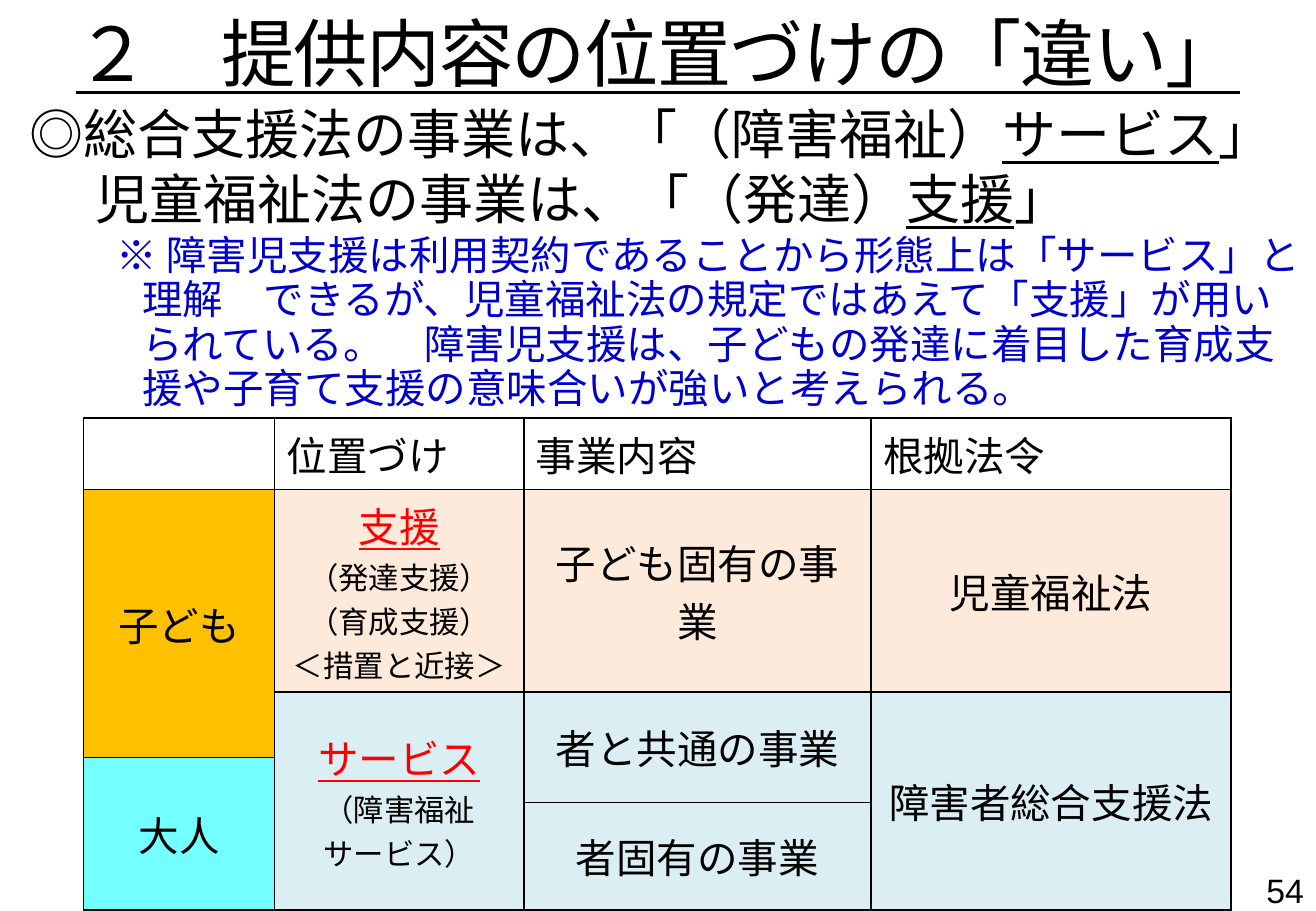
from dataclasses import dataclass
from lxml.etree import SubElement
from pptx import Presentation
from pptx.dml.color import RGBColor as Rgb
from pptx.enum.text import MSO_ANCHOR as Anchor, MSO_AUTO_SIZE as Fit, PP_ALIGN as Align
from pptx.oxml.ns import qn
from pptx.util import Cm, Pt


@dataclass(frozen=True)
class Theme:
    """Hold the colours, fonts and type sizes."""
    ink: str = "000000"
    note: str = "0000CC"
    key: str = "FF0000"
    child: str = "FFC000"
    adult: str = "73FEFF"
    peach: str = "FDEADA"
    sky: str = "DBEEF4"
    sans: str = "Arial"
    gothic: str = "Noto Sans CJK JP"
    title: int = 44
    lead: int = 32
    text: int = 24
    page: int = 20
    small: int = 18


LOOK = Theme()
WIDTHS = (3.99, 5.21, 7.26, 7.52)
HEIGHTS = (1.5, 4.23, 1.37, 0.94, 2.25)
HEADS = ("", "位置づけ", "事業内容", "根拠法令")
CELLS = (
    (1, 0, 2, LOOK.child, ("子ども",)),
    (3, 0, 2, LOOK.adult, ("大人",)),
    (1, 1, 1, LOOK.peach, ("支援", "（発達支援）", "（育成支援）", "＜措置と近接＞")),
    (2, 1, 3, LOOK.sky, ("サービス", "（障害福祉", "サービス）")),
    (1, 2, 1, LOOK.peach, ("子ども固有の事業",)),
    (2, 2, 2, LOOK.sky, ("者と共通の事業",)),
    (4, 2, 1, LOOK.sky, ("者固有の事業",)),
    (1, 3, 1, LOOK.peach, ("児童福祉法",)),
    (2, 3, 3, LOOK.sky, ("障害者総合支援法",)),
)
LEADS = (
    ("◎総合支援法の事業は、「（障害福祉）", "サービス", "」"),
    ("児童福祉法の事業は、「（発達）", "支援", "」"),
)
NOTE = ("※ 障害児支援は利用契約であることから形態上は「サービス」と理解　"
        "できるが、児童福祉法の規定ではあえて「支援」が用いられている。　"
        "障害児支援は、子どもの発達に着目した育成支援や子育て支援の意味合いが強いと考えられる。")


def style(para, size, tint=LOOK.ink, face=LOOK.sans, align=Align.LEFT):
    """Set the font and alignment of a paragraph."""
    para.alignment = align
    font = para.font
    font.size, font.name = Pt(size), face
    font.color.rgb = Rgb.from_string(tint)


def indent(para, left, first):
    """Set the left margin and first-line indent."""
    props = para._p.get_or_add_pPr()
    props.set("marL", str(Cm(left)))
    props.set("indent", str(Cm(first)))


def add_title(slide):
    """Fill and place the title."""
    title = slide.shapes.title
    title.left, title.top, title.width, title.height = Cm(0), Cm(0.38), Cm(27.51), Cm(1.6)
    frame = title.text_frame
    frame.auto_size, frame.vertical_anchor = Fit.NONE, Anchor.TOP
    para = frame.paragraphs[0]
    run = para.add_run()
    run.text = "２　提供内容の位置づけの「違い」"
    run._r.get_or_add_rPr().set("spc", "-100")
    style(para, LOOK.title, align=Align.CENTER)
    para.font.underline = True
    para.line_spacing = 0.8


def add_box(slide, left, top, width, height):
    """Add a wrapping text box and return its frame."""
    box = slide.shapes.add_textbox(Cm(left), Cm(top), Cm(width), Cm(height))
    box.text_frame.word_wrap = True
    return box.text_frame


def add_body(slide):
    """Write the two lead lines and the note."""
    frame = add_box(slide, 0.36, 1.98, 27.1, 5.97)
    for row, parts in enumerate(LEADS):
        para = frame.add_paragraph() if row else frame.paragraphs[0]
        style(para, LOOK.lead, face=LOOK.gothic)
        para.line_spacing = Pt(38.5)
        for spot, text in enumerate(parts):
            run = para.add_run()
            run.text = text
            run.font.underline = spot == 1
    indent(frame.paragraphs[0], 1.5, -1.5)
    indent(frame.paragraphs[1], 1.38, 0)
    frame.paragraphs[0].space_before = Pt(3)
    para = frame.add_paragraph()
    para.text = NOTE
    style(para, LOOK.text, LOOK.note, LOOK.gothic)
    indent(para, 2.36, -0.53)
    para.line_spacing, para.space_before = Pt(26.4), Pt(2)


def edge(cell):
    """Draw thin black borders round a cell."""
    props = cell._tc.get_or_add_tcPr()
    for spot, side in enumerate(("lnL", "lnR", "lnT", "lnB")):
        line = props.makeelement(qn("a:" + side), {"w": str(Pt(1))})
        fill = SubElement(line, qn("a:solidFill"))
        SubElement(fill, qn("a:srgbClr"), val=LOOK.ink)
        props.insert(spot, line)


def fill_cell(cell, lines, tint):
    """Write centred lines on a coloured cell."""
    cell.fill.solid()
    cell.fill.fore_color.rgb = Rgb.from_string(tint)
    cell.text = "\n".join(lines)
    for row, para in enumerate(cell.text_frame.paragraphs):
        key = len(lines) > 1 and row == 0
        style(para, LOOK.small if row else LOOK.text,
              LOOK.key if key else LOOK.ink, align=Align.CENTER)
        para.font.underline = key


def add_grid(slide):
    """Build the table that compares the two laws."""
    shape = slide.shapes.add_table(len(HEIGHTS), len(WIDTHS), Cm(1.75), Cm(8.74),
                                   Cm(sum(WIDTHS)), Cm(sum(HEIGHTS)))
    table = shape.table
    table.first_row = table.horz_banding = False
    for col, width in zip(table.columns, WIDTHS):
        col.width = Cm(width)
    for row, height in zip(table.rows, HEIGHTS):
        row.height = Cm(height)
    for cell in table.iter_cells():
        cell.fill.background()
        cell.vertical_anchor = Anchor.MIDDLE
        edge(cell)
    for col, text in enumerate(HEADS):
        cell = table.cell(0, col)
        cell.text = text
        style(cell.text_frame.paragraphs[0], LOOK.text)
    for row, col, span, tint, lines in CELLS:
        cell = table.cell(row, col)
        if span > 1:
            cell.merge(table.cell(row + span - 1, col))
        fill_cell(cell, lines, tint)


def add_page(slide):
    """Write the page number."""
    frame = add_box(slide, 21.1, 18.08, 6.41, 1.07)
    frame.vertical_anchor = Anchor.MIDDLE
    frame.text = "54"
    style(frame.paragraphs[0], LOOK.page, align=Align.RIGHT)


def main():
    """Build and save the slide."""
    deck = Presentation()
    deck.slide_width, deck.slide_height = Cm(27.51), Cm(19.05)
    slide = deck.slides.add_slide(deck.slide_layouts[5])
    add_title(slide)
    add_body(slide)
    add_grid(slide)
    add_page(slide)
    deck.save("out.pptx")


if __name__ == "__main__":
    main()
